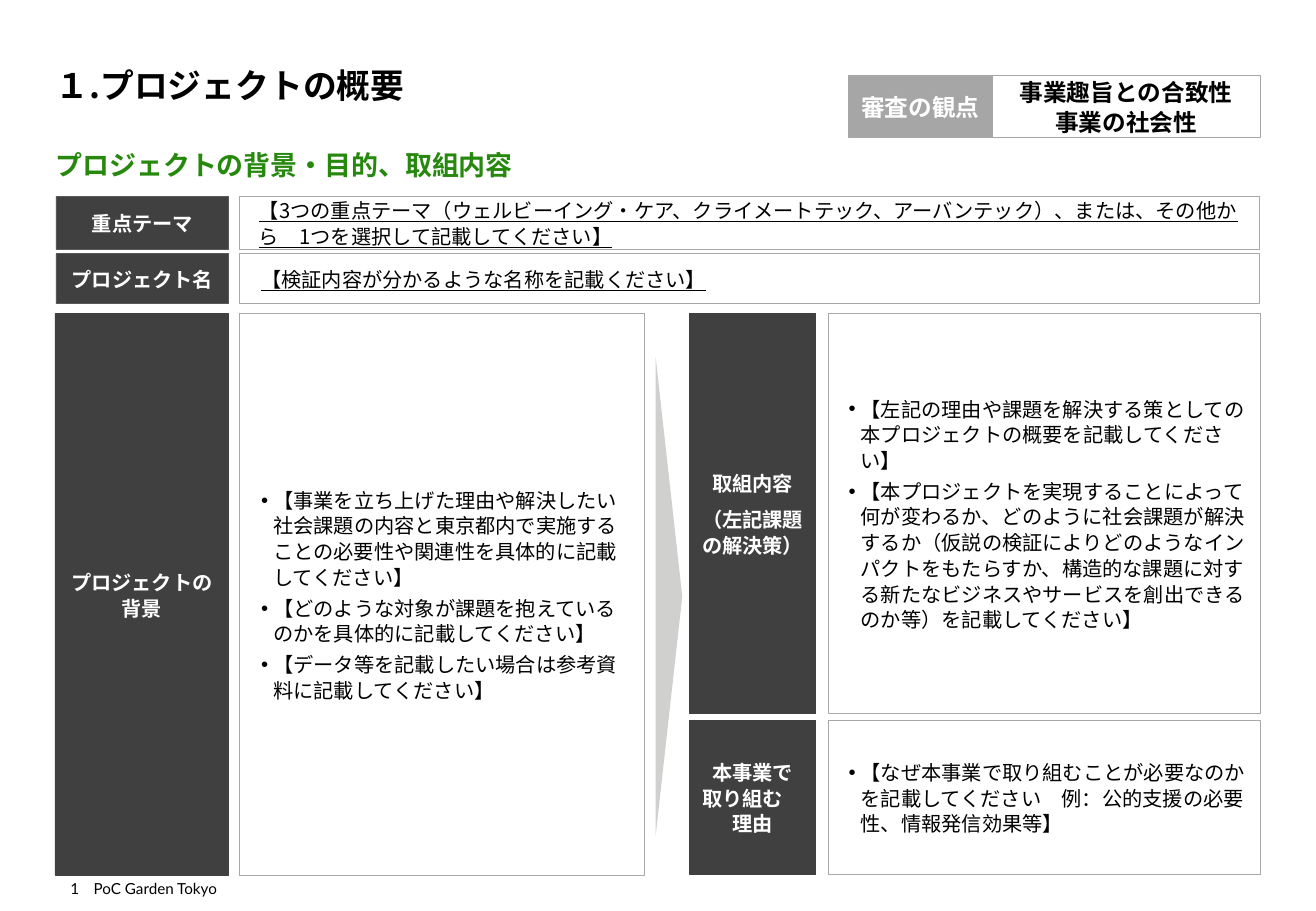
from collections import namedtuple
from copy import deepcopy
from dataclasses import dataclass

from lxml import etree
from pptx import Presentation
from pptx import util as u
from pptx.dml.color import RGBColor
from pptx.enum import shapes, text
from pptx.oxml import ns

Box = namedtuple("Box", "left top width height")


@dataclass(frozen=True)
class Theme:
    """Colours, fonts and type sizes of the slide."""
    ink: str = "000000"
    paper: str = "FFFFFF"
    green: str = "26890D"
    dark: str = "404040"
    dark_edge: str = "595959"
    edge: str = "A7A8AA"
    grey: str = "A6A6A6"
    arrow: str = "D0D0CE"
    japanese: str = "Noto Sans CJK JP"
    latin: str = "Lato"
    title: float = 20
    subtitle: float = 16
    criteria: float = 14
    body: float = 12
    footer: float = 9


THEME = Theme()
INSET = 5.67
LEFT, CENTER, RIGHT = (text.PP_ALIGN.LEFT, text.PP_ALIGN.CENTER, text.PP_ALIGN.RIGHT)


def rgb(colour):
    """Turn a theme colour into an RGB value."""
    return RGBColor.from_string(colour)


def apply(target, values):
    """Set attributes from a dict of format values."""
    for name, value in values.items():
        setattr(target, name, value)


def write(frame, lines, size, colour, font=THEME.japanese, bold=None, underline=None,
          align=LEFT, spacing=1.06, gap=0, indent=0, bullet=False, inset=INSET,
          inset_left=None, anchor=text.MSO_ANCHOR.MIDDLE, wrap=True):
    """Fill a text frame with formatted paragraphs."""
    margin = u.Pt(inset)
    apply(frame, {
        "word_wrap": wrap, "vertical_anchor": anchor,
        "margin_left": margin if inset_left is None else u.Pt(inset_left),
        "margin_top": margin, "margin_right": margin, "margin_bottom": margin})
    for index, line in enumerate(lines):
        paragraph = frame.add_paragraph() if index else frame.paragraphs[0]
        paragraph.text = line
        properties = paragraph._p.get_or_add_pPr()
        if indent:
            properties.set("marL", str(u.Pt(indent)))
            properties.set("indent", str(u.Pt(-7.2 if bullet else 0)))
        if bullet:
            etree.SubElement(properties, ns.qn("a:buFont"), typeface="Arial")
            etree.SubElement(properties, ns.qn("a:buChar"), char="•")
        apply(paragraph, {"alignment": align, "line_spacing": spacing,
                          "space_before": u.Pt(gap if index else 0)})
        for run in paragraph.runs:
            apply(run.font, {"size": u.Pt(size), "name": font,
                             "bold": bold, "underline": underline})
            run.font.color.rgb = rgb(colour)
            etree.SubElement(run.font._element, ns.qn("a:ea"), typeface=font)
        for line_break in paragraph._p.findall(ns.qn("a:br")):
            line_break.insert(0, deepcopy(paragraph.runs[0].font._element))


def add_text(slide, box, words, size, colour, **style):
    """Place one line of free text."""
    frame = slide.shapes.add_textbox(*map(u.Pt, box)).text_frame
    write(frame, [words], size, colour, inset=0, spacing=1.0, **style)


def add_panel(slide, box, fill, edge=None, kind=shapes.MSO_SHAPE.RECTANGLE):
    """Place a flat filled shape."""
    panel = slide.shapes.add_shape(kind, *map(u.Pt, box))
    panel.shadow.inherit = False
    panel.fill.solid()
    panel.fill.fore_color.rgb = rgb(fill)
    if edge:
        panel.line.color.rgb = rgb(edge)
        panel.line.width = u.Pt(0.5)
    else:
        panel.line.fill.background()
    return panel


def add_entry(slide, box, label_width, gap, label, lines, label_edge=THEME.dark, **style):
    """Place a dark label with its white answer field to the right."""
    heading = add_panel(slide, box._replace(width=label_width), THEME.dark, label_edge)
    write(heading.text_frame, label, THEME.body, THEME.paper,
          bold=True, align=CENTER, gap=6)
    offset = label_width + gap
    answer = add_panel(slide, box._replace(left=box.left + offset, width=box.width - offset),
                       THEME.paper, THEME.edge)
    write(answer.text_frame, lines, THEME.body, THEME.ink, gap=3, **style)


def add_header(slide, box):
    """Place the title, the subtitle and the review criteria."""
    add_text(slide, box._replace(height=48.2), "１.プロジェクトの概要", THEME.title,
             THEME.ink, bold=True, anchor=text.MSO_ANCHOR.BOTTOM)
    add_text(slide, Box(box.left, box.top + 65, 343, 36.5),
             "プロジェクトの背景・目的、取組内容", THEME.subtitle, THEME.green, bold=True)
    name_width, value_width = 85, 159
    value_box = Box(box.left + box.width - value_width, box.top + 30.2, value_width, 36.7)
    name_box = value_box._replace(left=value_box.left - name_width, width=name_width)
    for part, lines, fill, colour in (
            (value_box, ["事業趣旨との合致性", "事業の社会性"], THEME.paper, THEME.ink),
            (name_box, ["審査の観点"], THEME.grey, THEME.paper)):
        panel = add_panel(slide, part, fill, THEME.grey)
        write(panel.text_frame, lines, THEME.criteria, colour, bold=True, align=CENTER)


def add_basics(slide, box):
    """Place the rows for the theme and the project name."""
    name_height = 29.7
    rows = (
        (box._replace(height=31.5), "重点テーマ",
         "【3つの重点テーマ（ウェルビーイング・ケア、クライメートテック、アーバンテック）、"
         "または、その他から　1つを選択して記載してください】", {"inset_left": 11.5}),
        (box._replace(top=box.top + box.height - name_height, height=name_height),
         "プロジェクト名", "【検証内容が分かるような名称を記載ください】", {"indent": 7.2}))
    for row, label, answer, style in rows:
        add_entry(slide, row, 102.5, 6.3, [label], [answer], THEME.dark_edge,
                  underline=True, **style)


def add_background(slide, box):
    """Place the project background column."""
    add_entry(slide, box, 103, 6.3, ["プロジェクトの背景"], [
        "【事業を立ち上げた理由や解決したい社会課題の内容と東京都内で実施することの"
        "必要性や関連性を具体的に記載してください】",
        "【どのような対象が課題を抱えているのかを具体的に記載してください】",
        "【データ等を記載したい場合は参考資料に記載してください】",
    ], indent=14.4, bullet=True)


def add_arrow(slide, box):
    """Place the wedge that points from the background to the solution."""
    left = box.left + (box.width - box.height) / 2
    top = box.top + (box.height - box.width) / 2
    wedge = add_panel(slide, Box(left, top, box.height, box.width), THEME.arrow,
                      kind=shapes.MSO_SHAPE.FLOWCHART_MERGE)
    wedge.rotation = 270


def add_solution(slide, box):
    """Place the activities and the reason for joining the programme."""
    reason_height = 91.5
    activities = box._replace(height=box.height - reason_height - 4)
    reason = box._replace(top=box.top + box.height - reason_height, height=reason_height)
    entries = (
        (activities, ["取組内容", "（左記課題の解決策）"], [
            "【左記の理由や課題を解決する策としての本プロジェクトの概要を記載してください】",
            "【本プロジェクトを実現することによって何が変わるか、どのように社会課題が解決するか"
            "（仮説の検証によりどのようなインパクトをもたらすか、構造的な課題に対する"
            "新たなビジネスやサービスを創出できるのか等）を記載してください】"]),
        (reason, ["本事業で\v取り組む　理由"], [
            "【なぜ本事業で取り組むことが必要なのかを記載してください　"
            "例：公的支援の必要性、情報発信効果等】"]))
    for row, label, answers in entries:
        add_entry(slide, row, 75, 7.2, label, answers, indent=13.7, bullet=True)


def add_footer(slide, box):
    """Place the page number and the programme name."""
    style = {"font": THEME.latin, "anchor": text.MSO_ANCHOR.BOTTOM}
    add_text(slide, box._replace(width=14), "1", THEME.footer, THEME.ink,
             align=RIGHT, wrap=False, **style)
    add_text(slide, box._replace(left=box.left + 22.5, width=box.width - 22.5),
             "PoC Garden Tokyo", THEME.footer, THEME.ink, **style)


def main():
    """Build the project overview slide."""
    deck = Presentation()
    apply(deck, {"slide_width": u.Pt(780), "slide_height": u.Pt(540)})
    slide = deck.slides.add_slide(deck.slide_layouts[6])
    add_header(slide, Box(33, 14.4, 714, 102))
    add_basics(slide, Box(33.2, 116.4, 713.6, 63.6))
    add_background(slide, Box(32.6, 186, 349.2, 332.7))
    add_arrow(slide, Box(388.6, 211.7, 15.8, 283.7))
    add_solution(slide, Box(408.6, 186, 338.4, 332.4))
    add_footer(slide, Box(33, 518.5, 343, 13.5))
    deck.save("out.pptx")


if __name__ == "__main__":
    main()
